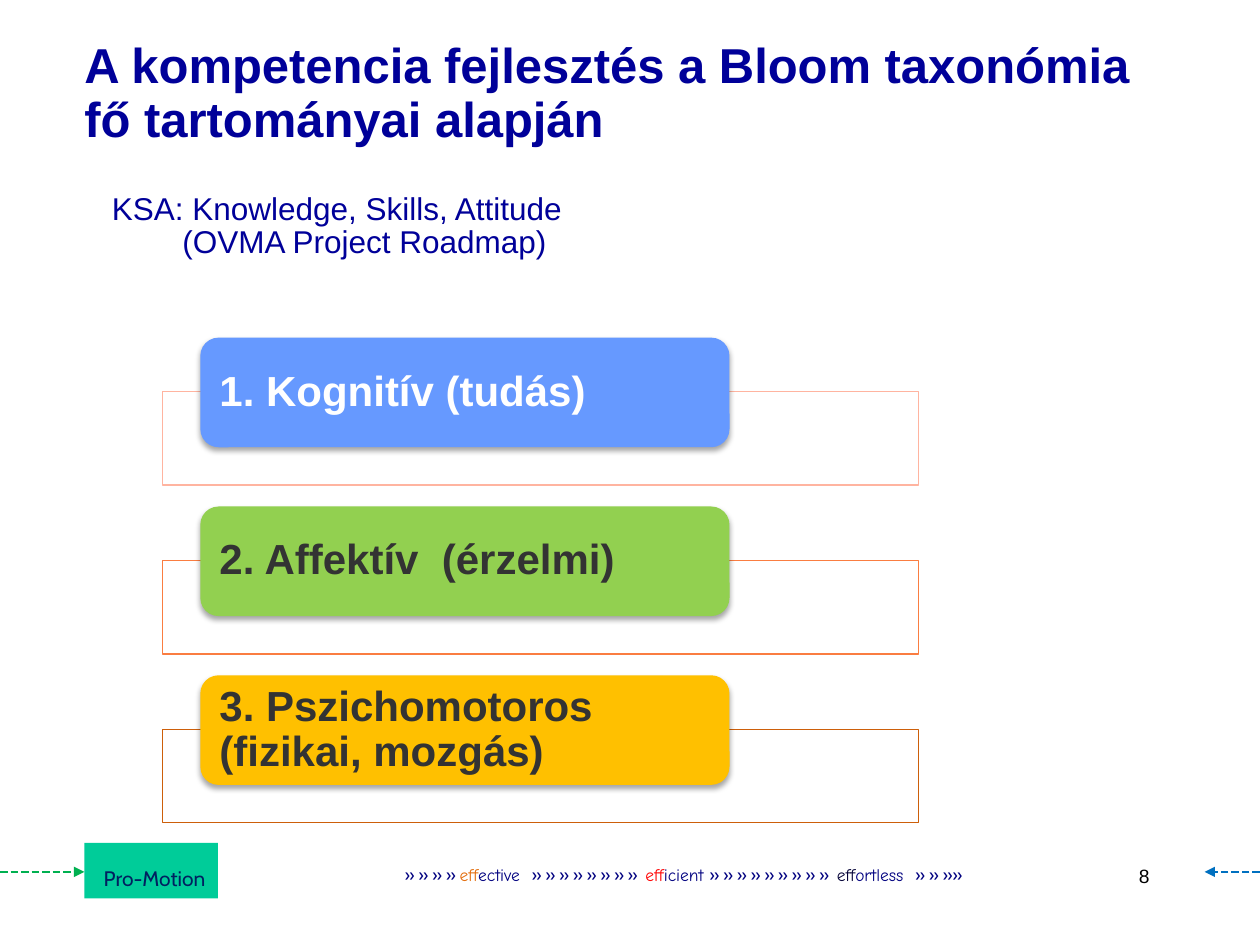
"""Build the slide on the three main domains of the Bloom taxonomy."""
from lxml import etree
from pptx import Presentation
from pptx import util as u
from pptx.dml import color as dml
from pptx.enum import dml as lines, shapes, text
from pptx.oxml import ns, parse_xml

NAVY, BLUE, DARK = "000080", "000099", "333333"
color = dml.RGBColor.from_string

presentation = Presentation()
presentation.slide_width, presentation.slide_height = u.Inches(10), u.Inches(7.5)
slide = presentation.slides.add_slide(presentation.slide_layouts[6])
column = row = u.Inches(0.1)


def place(left, top, width, height):
    """Turn grid columns and rows into slide lengths."""
    return [int(left * column), int(top * row), int(width * column), int(height * row)]


def write(shape, words, font, size, ink, bold=False, margins=(0.1, 0.05), spacing=None):
    """Fill a shape with one formatted paragraph and return the paragraph."""
    frame = shape.text_frame
    frame.word_wrap = True
    frame.margin_left = frame.margin_right = u.Inches(margins[0])
    frame.margin_top = frame.margin_bottom = u.Inches(margins[1])
    paragraph = frame.paragraphs[0]
    paragraph.text = words
    paragraph.alignment = text.PP_ALIGN.LEFT
    paragraph.line_spacing = spacing
    for run in paragraph.runs:
        run.font.name, run.font.size, run.font.bold = font, u.Pt(size), bold
        run.font.color.rgb = color(ink)
    return paragraph


badge = slide.shapes.add_shape(shapes.MSO_SHAPE.RECTANGLE, *place(6.7, 66.9, 10.6, 4.4))
badge.shadow.inherit = False
badge.fill.solid()
badge.fill.fore_color.rgb = color("00CC99")
badge.line.fill.background()
badge.text_frame.vertical_anchor = text.MSO_ANCHOR.TOP
paragraph = write(badge, "Pro-Motion", "Cabin", 12, "002060", spacing=u.Pt(24))
paragraph.alignment = text.PP_ALIGN.RIGHT
badge.text_frame.margin_left = 0

for start, end, ink in ((0, 6.7, "00B050"), (100, 95.6, "0070C0")):
    arrow = slide.shapes.add_connector(
        shapes.MSO_CONNECTOR.STRAIGHT, *place(start, 69.2, end, 69.2))
    arrow.line.color.rgb = color(ink)
    arrow.line.width = u.Pt(1.5)
    arrow.line.dash_style = lines.MSO_LINE.SQUARE_DOT
    etree.SubElement(arrow.line._get_or_add_ln(), ns.qn("a:tailEnd"), type="triangle")
    etree.SubElement(arrow._element.spPr, ns.qn("a:effectLst"))

number = slide.shapes.add_textbox(*place(89.4, 68.1, 4.7, 2.1))
write(number, "8", "Arial", 11, "000000")

motto = slide.shapes.add_textbox(*place(17.2, 68.1, 74.4, 2.7))
paragraph = write(motto, "» » » » ", "Cabin", 10, NAVY)
paragraph.alignment = text.PP_ALIGN.CENTER
for words, font, ink in (
    ("eff", "Comic Neue", "E36C0A"), ("ective  ", "Comic Neue", NAVY),
    ("» » » » » » » »  ", "Cabin", NAVY),
    ("eff", "Comic Neue", "FF0000"), ("icient ", "Comic Neue", NAVY),
    ("» » » » » » » » »  ", "Cabin", NAVY),
    ("eff", "Comic Neue", "030036"), ("ortless  ", "Comic Neue", NAVY),
    ("» » »» ", "Cabin", NAVY),
):
    run = paragraph.add_run()
    run.text = words
    run.font.name, run.font.size = font, u.Pt(10)
    run.font.color.rgb = color(ink)

subtitle = slide.shapes.add_textbox(*place(7.9, 11.8, 88.3, 12.5))
subtitle.text_frame.vertical_anchor = text.MSO_ANCHOR.MIDDLE
paragraph = write(subtitle, "KSA: Knowledge, Skills, Attitude \v(OVMA Project Roadmap)",
                  "Arial", 18, BLUE, spacing=0.85)
properties = paragraph._p.get_or_add_pPr()
properties.set("marL", str(u.Inches(0.56)))
properties.set("indent", str(u.Inches(-0.56)))

domains = (
    ("1. Kognitív (tudás)", "6699FF", "FFFFFF", "FFB4A0"),
    ("2. Affektív  (érzelmi)", "92D050", DARK, "FA7D41"),
    ("3. Pszichomotoros (fizikai, mozgás)", "FFC000", DARK, "CD5F0A"),
)
for index, (words, fill, ink, border) in enumerate(domains):
    top = 26.8 + index * 13.4
    panel = slide.shapes.add_shape(
        shapes.MSO_SHAPE.RECTANGLE, *place(12.9, top + 4.3, 60, 7.4))
    panel.shadow.inherit = False
    panel.fill.solid()
    panel.fill.fore_color.rgb = color("FFFFFF")
    tint = panel._element.spPr.find(ns.qn("a:solidFill"))[0]
    etree.SubElement(tint, ns.qn("a:alpha"), val="90000")
    panel.line.color.rgb = color(border)
    panel.line.width = u.Pt(0.75)

    label = slide.shapes.add_shape(
        shapes.MSO_SHAPE.ROUNDED_RECTANGLE, *place(15.9, top, 42, 8.7))
    label.fill.solid()
    label.fill.fore_color.rgb = color(fill)
    label.line.fill.background()
    label._element.spPr.append(parse_xml(
        f'<a:effectLst {ns.nsdecls("a")}>'
        f'<a:outerShdw blurRad="{u.Pt(3.1)}" dist="{u.Pt(1.8)}" dir="5400000" rotWithShape="0">'
        '<a:srgbClr val="000000"><a:alpha val="35000"/></a:srgbClr>'
        '</a:outerShdw></a:effectLst>'))
    label.text_frame.vertical_anchor = text.MSO_ANCHOR.MIDDLE
    write(label, words, "Arial", 24, ink, True, (0.11, 0), 0.9)

title = slide.shapes.add_textbox(*place(6.7, 3.1, 86.7, 6.7))
write(title, "A kompetencia fejlesztés a Bloom taxonómia fő tartományai alapján",
      "Arial", 28, BLUE, True, (0, 0), u.Pt(31))

presentation.save("out.pptx")
